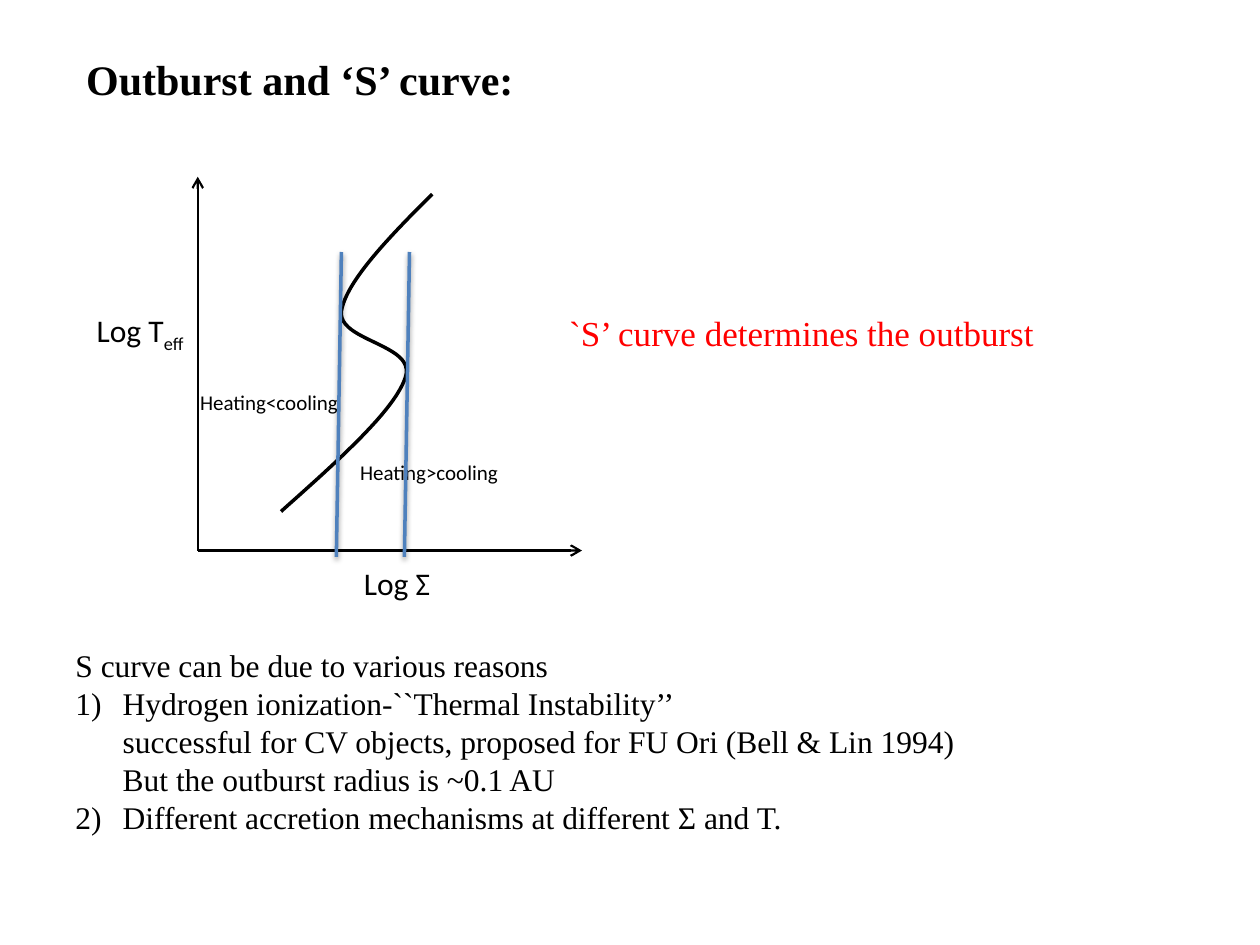
from lxml.etree import SubElement
from pptx import Presentation
from pptx.dml.color import RGBColor
from pptx.enum.shapes import MSO_CONNECTOR as Connector
from pptx.enum.text import MSO_ANCHOR as Anchor, MSO_AUTO_SIZE as AutoSize, PP_ALIGN as Align
from pptx.oxml.ns import qn
from pptx.util import Pt

COLORS = {"ink": "000000", "accent": "FF0000", "guide": "4F81BD"}
SERIF, SANS = "Times New Roman", "Calibri"


def write(paragraph, text, size=18, font=SERIF, color="ink", bold=False, baseline=0):
    run = paragraph.add_run()
    run.text = text
    run.font.size = Pt(size)
    run.font.name = font
    run.font.bold = bold
    run.font.color.rgb = RGBColor.from_string(COLORS[color])
    if baseline:
        run.font._element.set("baseline", str(baseline * 1000))


def add_line(start, end, color, width):
    line = slide.shapes.add_connector(Connector.STRAIGHT, *map(Pt, start + end))
    line.line.color.rgb = RGBColor.from_string(COLORS[color])
    line.line.width = Pt(width)
    effects = SubElement(line._element.spPr, qn("a:effectLst"))
    return line, effects


presentation = Presentation()
presentation.slide_width, presentation.slide_height = Pt(720), Pt(540)
slide = presentation.slides.add_slide(presentation.slide_layouts[5])

# Title
title = slide.shapes.title
title.left, title.top, title.width, title.height = Pt(42), Pt(0), Pt(705.6), Pt(90)
title.text_frame.vertical_anchor = Anchor.MIDDLE
title.text_frame.paragraphs[0].alignment = Align.LEFT
write(title.text_frame.paragraphs[0], "Outburst and ‘S’ curve:", size=24, bold=True)

# Axes
origin = (113, 314.6)
for tip in [(113, 101), (332.6, 314.6)]:
    axis, _ = add_line(origin, tip, "ink", 1.25)
    SubElement(axis.line._get_or_add_ln(), qn("a:tailEnd"), type="arrow")

# Labels: left, top, width, height, then runs of text and format
labels = [
    (48.2, 174.2, 64.8, 29, [("Log T", dict(font=SANS)),
                             ("eff", dict(font=SANS, baseline=-25))]),
    (200.9, 319, 52.6, 29, [("Log Σ", dict(font=SANS))]),
    (318.2, 174.2, 282.2, 31.5, [("`S’ curve determines the outburst",
                                  dict(size=20, color="accent"))]),
    (198.7, 259.2, 94.3, 21.8, [("Heating>cooling", dict(size=12, font=SANS))]),
    (107.3, 218.9, 94.3, 21.8, [("Heating<cooling", dict(size=12, font=SANS))]),
]
for left, top, width, height, runs in labels:
    box = slide.shapes.add_textbox(Pt(left), Pt(top), Pt(width), Pt(height))
    box.text_frame.word_wrap = False
    box.text_frame.auto_size = AutoSize.SHAPE_TO_FIT_TEXT
    for text, style in runs:
        write(box.text_frame.paragraphs[0], text, **style)

# Reasons: text, indented or not, list number
reasons = [
    ("S curve can be due to various reasons", False, None),
    ("Hydrogen ionization-``Thermal Instability’’", True, 1),
    ("successful for CV objects, proposed for FU Ori (Bell & Lin 1994)", True, None),
    ("But the outburst radius is ~0.1 AU", True, None),
    ("Different accretion mechanisms at different Σ and T.", True, 2),
]
box = slide.shapes.add_textbox(Pt(36), Pt(365.8), Pt(522), Pt(152.6))
box.text_frame.word_wrap = False
box.text_frame.auto_size = AutoSize.SHAPE_TO_FIT_TEXT
for index, (text, indented, number) in enumerate(reasons):
    paragraph = box.text_frame.add_paragraph() if index else box.text_frame.paragraphs[0]
    properties = paragraph._p.get_or_add_pPr()
    if indented:
        properties.set("marL", str(Pt(27)))
        properties.set("indent", str(-Pt(27) if number else 0))
    if number:
        SubElement(properties, qn("a:buFont"), typeface=SERIF)
        SubElement(properties, qn("a:buAutoNum"), type="arabicParenR", startAt=str(number))
    write(paragraph, text)

# S curve: three cubic Bezier pieces, sampled evenly
start = (247, 110.9)
pieces = [
    [(222.5, 135.4), (198, 160.6), (195.1, 177.8)],
    [(193, 195.1), (237.6, 196.6), (231.8, 215.3)],
    [(226.1, 234), (193, 263.5), (160.6, 292.3)],
]
STEPS = 24
points, knot = [], start
for piece in pieces:
    controls = [knot] + piece
    for step in range(1, STEPS + 1):
        t = step / STEPS
        weights = [(1 - t) ** 3, 3 * t * (1 - t) ** 2, 3 * t ** 2 * (1 - t), t ** 3]
        points.append(tuple(Pt(sum(w * c[i] for w, c in zip(weights, controls)))
                            for i in (0, 1)))
    knot = piece[-1]
builder = slide.shapes.build_freeform(Pt(start[0]), Pt(start[1]))
builder.add_line_segments(points, close=False)
curve = builder.convert_to_shape()
curve.shadow.inherit = False
curve.fill.background()
curve.line.color.rgb = RGBColor.from_string(COLORS["ink"])
curve.line.width = Pt(2)

# Guide lines at the turning points, with a soft shadow
for top_x in (195.1, 234):
    _, effects = add_line((top_x, 144), (top_x - 2.9, 318.2), "guide", 2)
    shadow = SubElement(effects, qn("a:outerShdw"), blurRad=str(Pt(3.1)),
                        dist=str(Pt(1.6)), dir="5400000", rotWithShape="0")
    shadow_color = SubElement(shadow, qn("a:srgbClr"), val=COLORS["ink"])
    SubElement(shadow_color, qn("a:alpha"), val="38000")

presentation.save("out.pptx")
